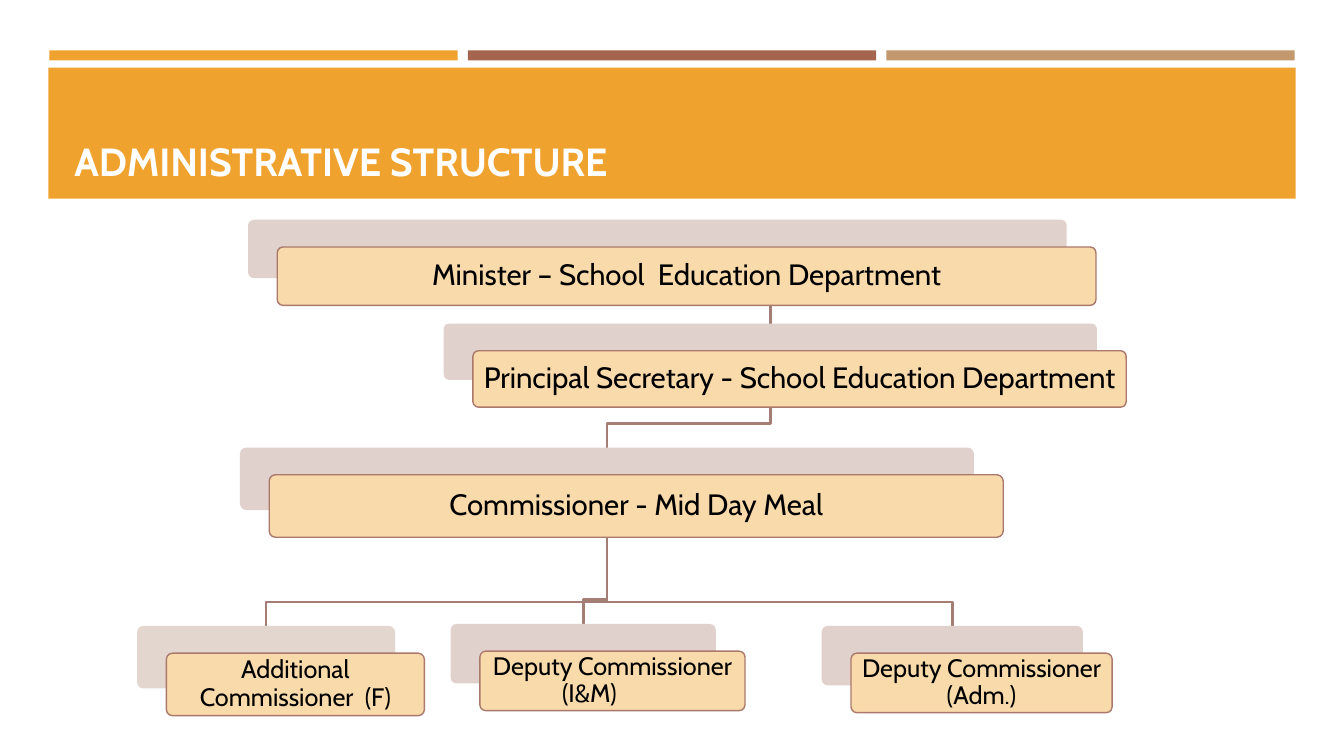
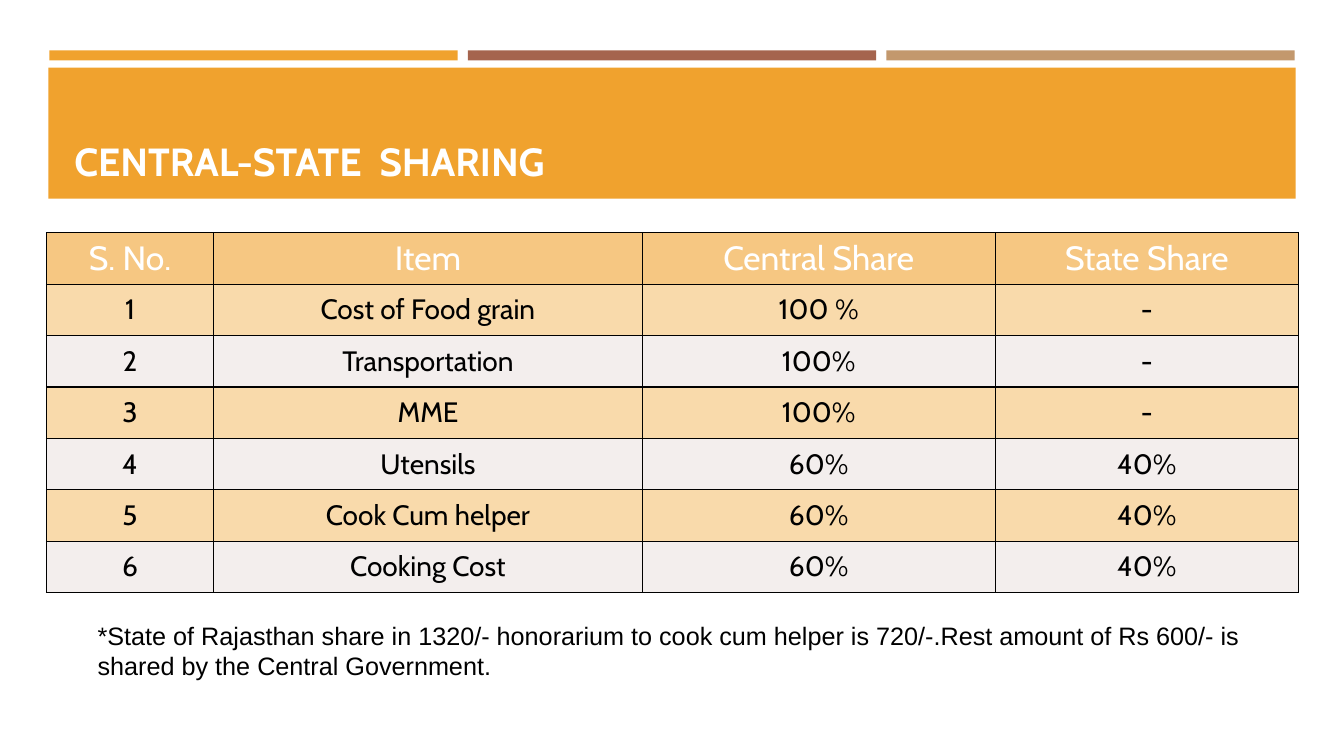
from lxml import etree
from pptx import Presentation
from pptx.dml.color import RGBColor
from pptx.enum.shapes import MSO_SHAPE
from pptx.enum.text import MSO_ANCHOR, PP_ALIGN
from pptx.oxml.ns import qn
from pptx.util import Inches, Pt

RECT, ROUND = MSO_SHAPE.RECTANGLE, MSO_SHAPE.ROUNDED_RECTANGLE
LEFT, CENTER = PP_ALIGN.LEFT, PP_ALIGN.CENTER
TOP, MIDDLE, BOTTOM = MSO_ANCHOR.TOP, MSO_ANCHOR.MIDDLE, MSO_ANCHOR.BOTTOM

ORANGE, BROWN, TAN = "F0A22E", "A5644E", "C3986D"
WHITE, BLACK = "FFFFFF", "000000"
PEACH, PALE, HEADER = "F9DAAB", "F3EEED", "F6C782"
SHADE, EDGE, LINK = "E1D1CC", "AA796C", "A47E74"
FONT = "Cabin"

STEP = 0.29, 0.27  # offset of a card from the plate behind it
DROP = 0.24        # height of a link's last stretch

# Plate boxes (left, top, width, height), then label, text size, parent, plate colour
POSTS = {
    "minister": ((2.46, 2.18, 8.12, 0.58), "Minister – School  Education Department",
                 21, None, SHADE),
    "secretary": ((4.4, 3.21, 6.48, 0.56),
                  "Principal Secretary - School Education Department",
                  21, "minister", SHADE),
    "commissioner": ((2.38, 4.44, 7.28, 0.62), "Commissioner - Mid Day Meal",
                     21, "secretary", SHADE),
    "additional": ((1.36, 6.21, 2.56, 0.62), "Additional Commissioner  (F)",
                   18, "commissioner", "E2D6CF"),
    "deputy_im": ((4.47, 6.19, 2.63, 0.59), "Deputy Commissioner (I&M)\t",
                  18, "commissioner", SHADE),
    "deputy_adm": ((8.15, 6.21, 2.59, 0.59), "Deputy Commissioner (Adm.)",
                   18, "commissioner", SHADE),
}

SHARES = [
    ("S. No.", "Item", "Central Share", "State Share"),
    ("1", "Cost of Food grain", "100 %", "-"),
    ("2", "Transportation", "100%", "-"),
    ("3", "MME", "100%", "-"),
    ("4", "Utensils", "60%", "40%"),
    ("5", "Cook Cum helper", "60%", "40%"),
    ("6", "Cooking Cost", "60%", "40%"),
]


def rgb(color):
    return RGBColor.from_string(color)


def inches(box):
    return [Inches(v) for v in box]


def write(tf, text, size=18, color=BLACK, font=FONT, bold=False, align=LEFT,
          anchor=TOP, spacing=None, inset=None):
    tf.word_wrap = True
    tf.vertical_anchor = anchor
    if inset is not None:
        tf.margin_left = tf.margin_right = Inches(inset)
        tf.margin_top = tf.margin_bottom = Inches(inset)
    p = tf.paragraphs[0]
    p.alignment = align
    if spacing:
        p.line_spacing = spacing
    r = p.add_run()
    r.text = text
    r.font.size, r.font.name, r.font.bold = Pt(size), font, bold
    r.font.color.rgb = rgb(color)


def add_text(s, box, text, **fmt):
    write(s.shapes.add_textbox(*inches(box)).text_frame, text, **fmt)


def add_box(s, kind, box, fill, line=None):
    sp = s.shapes.add_shape(kind, *inches(box))
    sp.shadow.inherit = False
    sp.fill.solid()
    sp.fill.fore_color.rgb = rgb(fill)
    if kind == ROUND:
        sp.adjustments[0] = 0.1
    if line:
        sp.line.color.rgb = rgb(line)
        sp.line.width = Pt(1)
    else:
        sp.line.fill.background()
    return sp


def new_slide(prs, title):
    """Slide with the three strips and the title band."""
    s = prs.slides.add_slide(prs.slide_layouts[6])
    for i, color in enumerate((ORANGE, BROWN, TAN)):
        add_box(s, RECT, (0.49 + i * 4.15, 0.5, 4.05, 0.1), color)
    add_box(s, RECT, (0.48, 0.67, 12.37, 1.3), ORANGE)
    add_text(s, (0.64, 0.77, 12.06, 1.11), title, size=28, color=WHITE,
             bold=True, anchor=BOTTOM)
    return s


def add_link(s, parent, child):
    """Bent line from the bottom of one plate to the top of another."""
    x1, y1 = parent[0] + parent[2] / 2, parent[1] + parent[3]
    x2, y2 = child[0] + child[2] / 2, child[1]
    bend = y2 - DROP
    builder = s.shapes.build_freeform(Inches(x1), Inches(y1))
    builder.add_line_segments(
        [inches(pt) for pt in ((x1, bend), (x2, bend), (x2, y2))], close=False)
    sp = builder.convert_to_shape()
    sp.shadow.inherit = False
    sp.fill.background()
    sp.line.color.rgb = rgb(LINK)
    sp.line.width = Pt(1.75)


def add_post(s, box, label, size, plate):
    """Plate with a labelled card in front of it."""
    add_box(s, ROUND, box, plate)
    x, y, w, h = box
    card = add_box(s, ROUND, (x + STEP[0], y + STEP[1], w, h), PEACH, EDGE)
    write(card.text_frame, label, size=size, align=CENTER, anchor=MIDDLE,
          spacing=0.9, inset=0.05)


def add_borders(cell):
    tc_pr = cell._tc.get_or_add_tcPr()
    for side in ("a:lnL", "a:lnR", "a:lnT", "a:lnB"):
        ln = etree.SubElement(tc_pr, qn(side), w=str(Pt(1)))
        fill = etree.SubElement(ln, qn("a:solidFill"))
        etree.SubElement(fill, qn("a:srgbClr"), val=BLACK)


def add_share_table(s, box, rows, widths):
    table = s.shapes.add_table(len(rows), len(widths), *inches(box)).table
    for column, width in zip(table.columns, widths):
        column.width = Inches(width)
    for i, row in enumerate(rows):
        fill = HEADER if i == 0 else (PALE, PEACH)[i % 2]
        for j, text in enumerate(row):
            cell = table.cell(i, j)
            add_borders(cell)
            cell.fill.solid()
            cell.fill.fore_color.rgb = rgb(fill)
            write(cell.text_frame, text, size=20 if i else 24,
                  color=BLACK if i else WHITE, align=CENTER)
            cell.vertical_anchor = MIDDLE


def structure_slide(prs):
    s = new_slide(prs, "ADMINISTRATIVE STRUCTURE")
    # Links lie behind the cards
    for box, _, _, parent, _ in POSTS.values():
        if parent:
            add_link(s, POSTS[parent][0], box)
    for box, label, size, _, plate in POSTS.values():
        add_post(s, box, label, size, plate)


def sharing_slide(prs):
    s = new_slide(prs, "CENTRAL-STATE  SHARING")
    add_share_table(s, (0.46, 2.31, 12.42, 3.57), SHARES, (1.66, 4.25, 3.5, 3.01))
    # Footnote
    add_text(s, (0.87, 6.1, 11.57, 0.71),
             "*State of Rajasthan share in 1320/- honorarium to cook cum helper is "
             "720/-.Rest amount of Rs 600/- is shared by the Central Government.",
             font="Arial")


def main():
    prs = Presentation()
    prs.slide_width, prs.slide_height = Inches(13.33), Inches(7.5)
    structure_slide(prs)
    sharing_slide(prs)
    prs.save("out.pptx")


if __name__ == "__main__":
    main()
